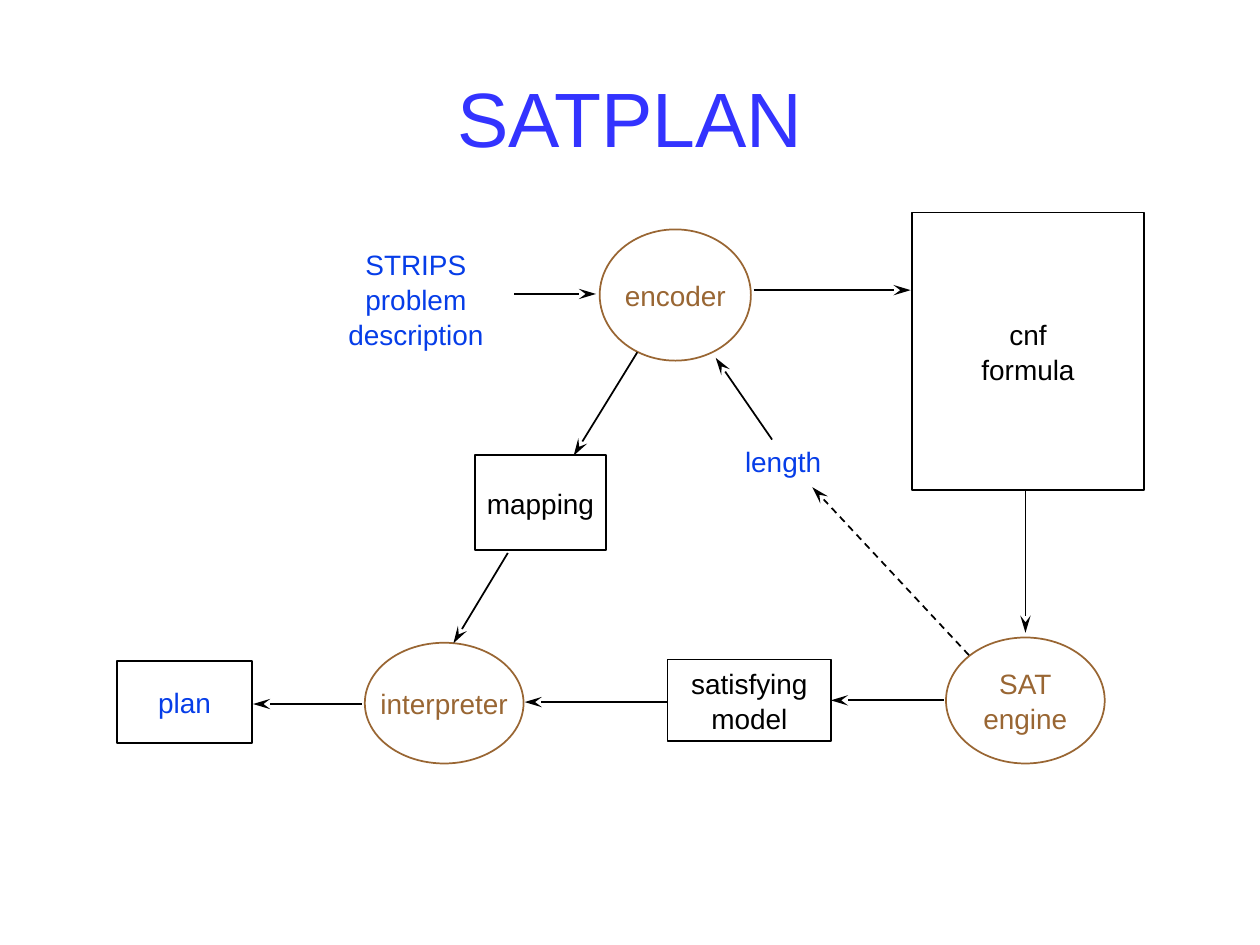
from lxml import etree
from pptx import Presentation
from pptx.dml.color import RGBColor
from pptx.enum import dml, shapes, text
from pptx.oxml import parse_xml
from pptx.oxml.ns import nsdecls, qn
from pptx.util import Pt

BLACK, BLUE, BROWN = "000000", "063DE8", "996633"
RECT, OVAL = shapes.MSO_SHAPE.RECTANGLE, shapes.MSO_SHAPE.OVAL


def paint(fmt, color):
    fmt.solid()
    fmt.fore_color.rgb = RGBColor.from_string(color)


def write(tf, lines, size, color, spacing=None):
    tf.vertical_anchor = text.MSO_ANCHOR.MIDDLE
    for i, line in enumerate(lines):
        p = tf.add_paragraph() if i else tf.paragraphs[0]
        p.alignment = text.PP_ALIGN.CENTER
        p.line_spacing = spacing
        r = p.add_run()
        r.text = line
        r.font.name, r.font.size = "Arial", Pt(size)
        paint(r.font.fill, color)


prs = Presentation()
prs.slide_width, prs.slide_height = Pt(720), Pt(540)
s = prs.slides.add_slide(prs.slide_layouts[5])

# Title with a soft text shadow
title = s.shapes.title
title.left, title.top, title.width, title.height = Pt(36), Pt(21.6), Pt(648), Pt(90)
write(title.text_frame, ["SATPLAN"], 44, "3333FF")
fill = title.text_frame.paragraphs[0].runs[0].font._element.find(qn("a:solidFill"))
fill.addnext(parse_xml(
    f'<a:effectLst {nsdecls("a")}><a:outerShdw blurRad="38100" dist="38100" dir="2700000">'
    '<a:srgbClr val="000000"/></a:outerShdw></a:effectLst>'))

# Data boxes, processes and plain labels (no shape)
nodes = [
    (RECT, 521.3, 121.5, 132.3, 158.5, BLACK, BLACK, ["cnf", "formula"]),
    (RECT, 381.4, 376.8, 93.7, 46.8, BLACK, BLACK, ["satisfying", "model"]),
    (RECT, 66.8, 377.8, 77.2, 46.8, BLACK, BLUE, ["plan"]),
    (RECT, 271.4, 260, 75, 54.2, BLACK, BLACK, ["mapping"]),
    (None, 418.3, 250, 58.3, 26.6, None, BLUE, ["length"]),
    (None, 192, 138.2, 91.4, 64.8, None, BLUE, ["STRIPS", "problem", "description"]),
    (OVAL, 540.6, 364.3, 90.7, 72, BROWN, BROWN, ["SAT", "engine"]),
    (OVAL, 342.7, 131.1, 86.4, 75, BROWN, BROWN, ["encoder"]),
    (OVAL, 208.5, 367.3, 90.7, 69, BROWN, BROWN, ["interpreter"]),
]
for kind, x, y, w, h, outline, color, lines in nodes:
    box = Pt(x), Pt(y), Pt(w), Pt(h)
    if kind is None:
        sp = s.shapes.add_textbox(*box)
    else:
        sp = s.shapes.add_shape(kind, *box)
        sp.shadow.inherit = False
        sp.fill.background()
        paint(sp.line.fill, outline)
        sp.line.width = Pt(1)
    sp.text_frame.word_wrap = False
    write(sp.text_frame, lines, 16, color, 1.04)

# Arrows: start, end, dashed
arrows = [
    (293.8, 168, 340.6, 168, False),       # description to encoder
    (430.6, 165.8, 520.4, 165.8, False),   # encoder to formula
    (586, 279.6, 586, 361.6, False),       # formula to engine
    (539.2, 400.2, 474.8, 400.2, False),   # engine to model
    (380.9, 401.2, 299.8, 401.2, False),   # model to interpreter
    (206.8, 402.3, 144.6, 402.3, False),   # interpreter to plan
    (290.2, 316, 259.1, 367.6, False),     # mapping to interpreter
    (364.2, 201.3, 327.8, 260.4, False),   # encoder to mapping
    (553.7, 374.4, 464.2, 278.4, True),    # engine to length
    (441.2, 251.2, 409, 204.5, False),     # length to encoder
]
for x1, y1, x2, y2, dashed in arrows:
    c = s.shapes.add_connector(shapes.MSO_CONNECTOR.STRAIGHT, Pt(x1), Pt(y1), Pt(x2), Pt(y2))
    paint(c.line.fill, BLACK)
    c.line.width = Pt(1)
    if dashed:
        c.line.dash_style = dml.MSO_LINE.DASH
    etree.SubElement(c.line._get_or_add_ln(), qn("a:tailEnd"), type="stealth", w="med", len="lg")
    etree.SubElement(c._element.spPr, qn("a:effectLst"))

prs.save("out.pptx")
